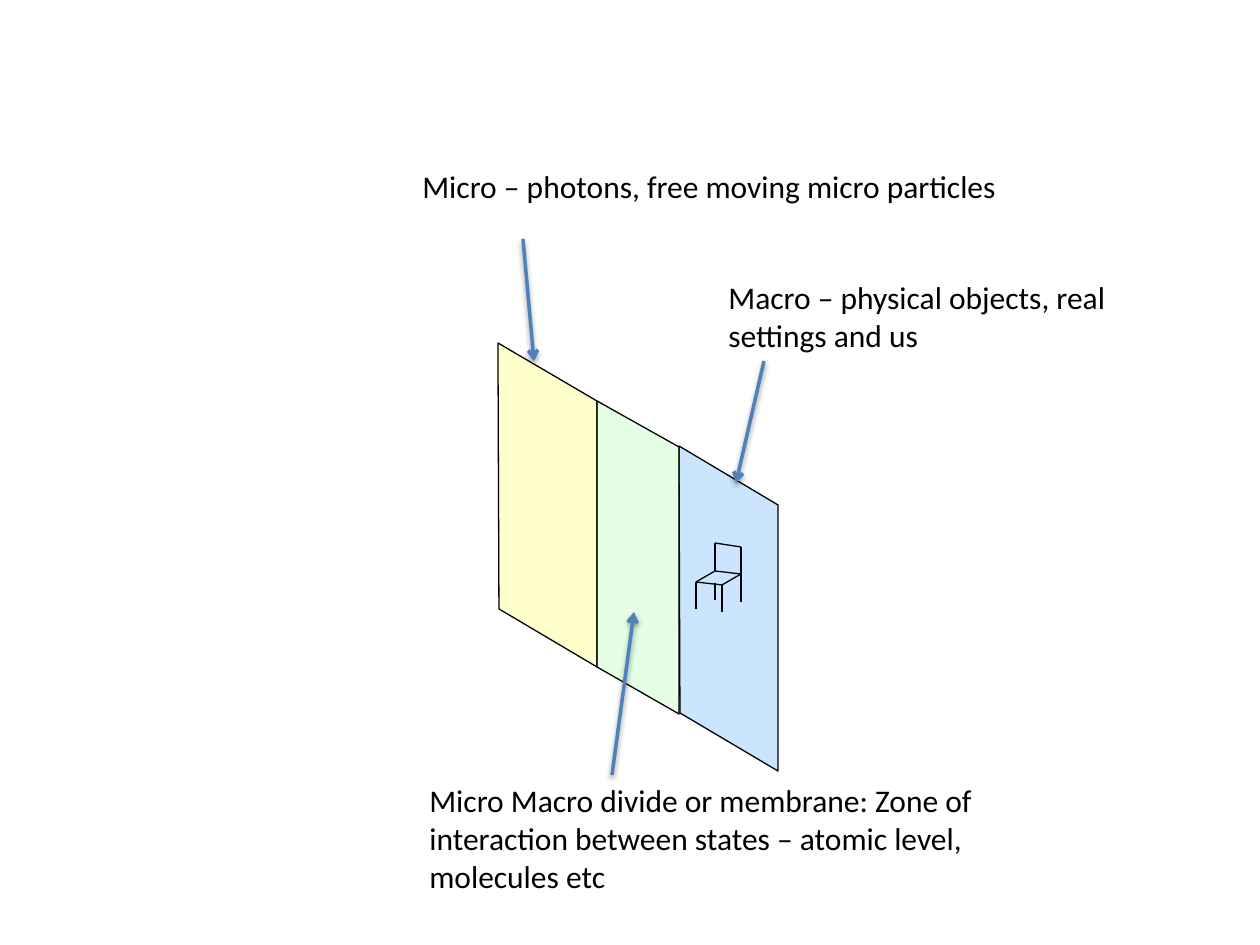
from lxml import etree
from pptx import Presentation
from pptx.dml.color import RGBColor
from pptx.enum.shapes import MSO_CONNECTOR
from pptx.enum.text import MSO_AUTO_SIZE
from pptx.oxml.ns import qn
from pptx.util import Pt

STRAIGHT = MSO_CONNECTOR.STRAIGHT
FIT_TEXT = MSO_AUTO_SIZE.SHAPE_TO_FIT_TEXT
EMU_PER_PX = 914400 / 126
BLANK_LAYOUT = 6

BLACK, ARROW_BLUE = "000000", "4F81BD"

# Fill and corners, from back to front
ZONES = [
    ("FFFF99", [(499, 609), (498, 343), (597, 401), (597, 667)]),
    ("99CCFF", [(680, 713), (679, 446), (778, 505), (778, 771)]),
    ("CCFFCC", [(597, 667), (597, 401), (679, 447), (679, 714)]),
]
# Text, box (left, top, width, height), wrapping
LABELS = [
    ("Micro – photons, free moving micro particles", (410, 161, 607, 50), False),
    ("Macro – physical objects, real settings and us", (716, 272, 408, 89), True),
    ("Micro Macro divide or membrane: Zone of interaction between states "
     "– atomic level, molecules etc", (417, 775, 693, 127), True),
]
ARROWS = [
    ((764, 361), (736, 483)),
    ((523, 239), (534, 361)),
    ((612, 775), (634, 612)),
]
SEAT = [(715, 571), (741, 574), (722, 585), (696, 582)]
BACKREST = [(715, 571), (715, 543), (741, 547), (741, 574)]
LEGS = [
    ((696, 582), (696, 609)),
    ((722, 585), (722, 612)),
    ((741, 574), (741, 602)),
    ((715, 583), (715, 600)),
]


def px(length):
    return round(length * EMU_PER_PX)


def color(hex_value):
    return RGBColor.from_string(hex_value)


def format_line(shape, hex_value, width):
    shape.line.color.rgb = color(hex_value)
    shape.line.width = Pt(width)


def add_zone(slide, fill, corners):
    """Draw a closed panel with a half-transparent fill."""
    builder = slide.shapes.build_freeform(*corners[0], scale=EMU_PER_PX)
    builder.add_line_segments(corners[1:], close=True)
    shape = builder.convert_to_shape()
    shape.shadow.inherit = False
    shape.fill.solid()
    shape.fill.fore_color.rgb = color(fill)
    fill_color = shape._element.spPr.find(qn("a:solidFill"))[0]
    etree.SubElement(fill_color, qn("a:alpha"), val="50000")
    format_line(shape, BLACK, 0.75)


def add_label(slide, text, box, wrap):
    frame = slide.shapes.add_textbox(*map(px, box)).text_frame
    frame.word_wrap = wrap
    frame.auto_size = FIT_TEXT
    run = frame.paragraphs[0].add_run()
    run.text = text
    for name, value in {"name": "Calibri", "size": Pt(18)}.items():
        setattr(run.font, name, value)
    run.font.color.rgb = color(BLACK)


def add_line(shapes, start, end, hex_value, width):
    """Add a straight connector and return it with its empty effect list."""
    connector = shapes.add_connector(STRAIGHT, *map(px, start + end))
    format_line(connector, hex_value, width)
    effects = etree.SubElement(connector._element.spPr, qn("a:effectLst"))
    return connector, effects


def add_arrow(slide, start, end):
    """Draw an open-headed arrow with a soft shadow below it."""
    connector, effects = add_line(slide.shapes, start, end, ARROW_BLUE, 2)
    line = connector._element.spPr.find(qn("a:ln"))
    etree.SubElement(line, qn("a:tailEnd"), type="arrow")
    shadow = etree.SubElement(effects, qn("a:outerShdw"), blurRad="40000",
                              dist="20000", dir="5400000", rotWithShape="0")
    shadow_color = etree.SubElement(shadow, qn("a:srgbClr"), val=BLACK)
    etree.SubElement(shadow_color, qn("a:alpha"), val="38000")


def add_chair(slide):
    group = slide.shapes.add_group_shape()
    seat_edges = list(zip(SEAT, SEAT[1:] + SEAT[:1]))
    back_edges = list(zip(BACKREST, BACKREST[1:]))
    for start, end in back_edges + seat_edges + LEGS:
        add_line(group.shapes, start, end, BLACK, 0.75)


def main():
    presentation = Presentation()
    presentation.slide_width = px(1260)
    presentation.slide_height = px(945)
    slide = presentation.slides.add_slide(presentation.slide_layouts[BLANK_LAYOUT])
    for fill, corners in ZONES:
        add_zone(slide, fill, corners)
    for text, box, wrap in LABELS:
        add_label(slide, text, box, wrap)
    for start, end in ARROWS:
        add_arrow(slide, start, end)
    add_chair(slide)
    presentation.save("out.pptx")


if __name__ == "__main__":
    main()
